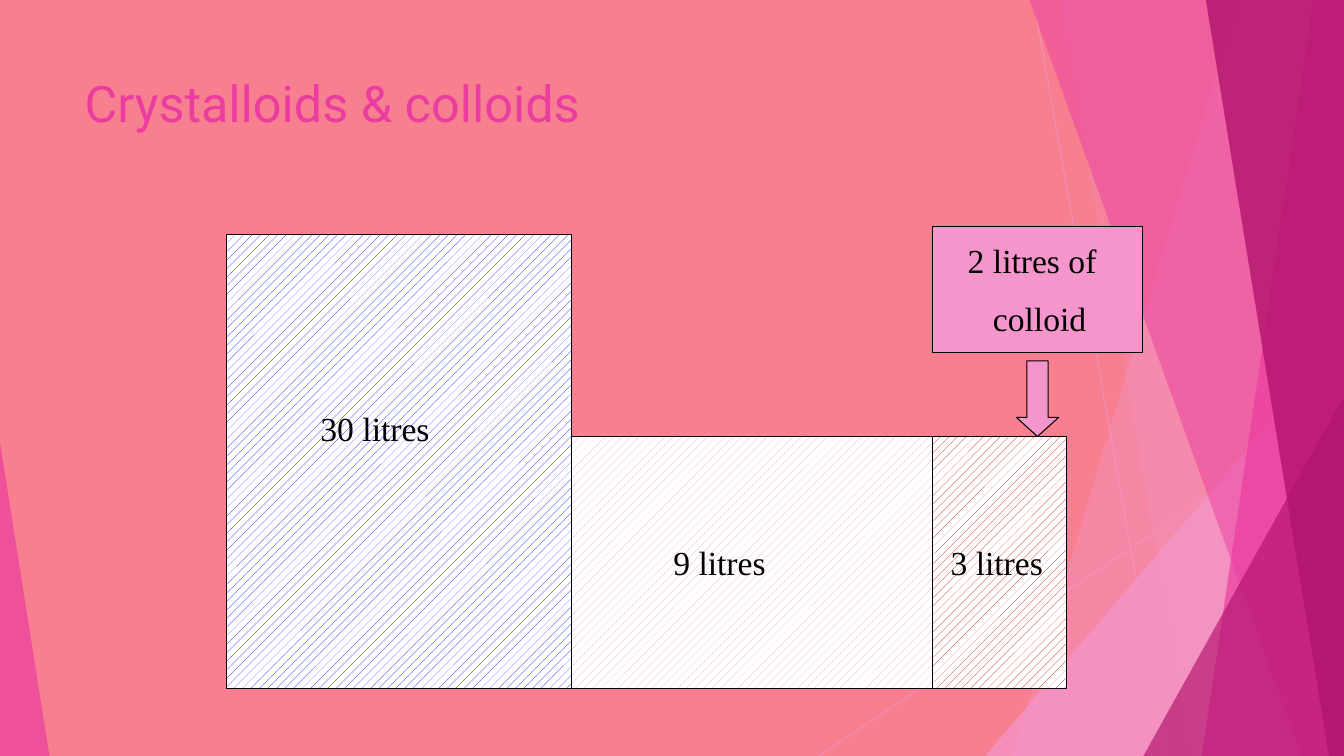
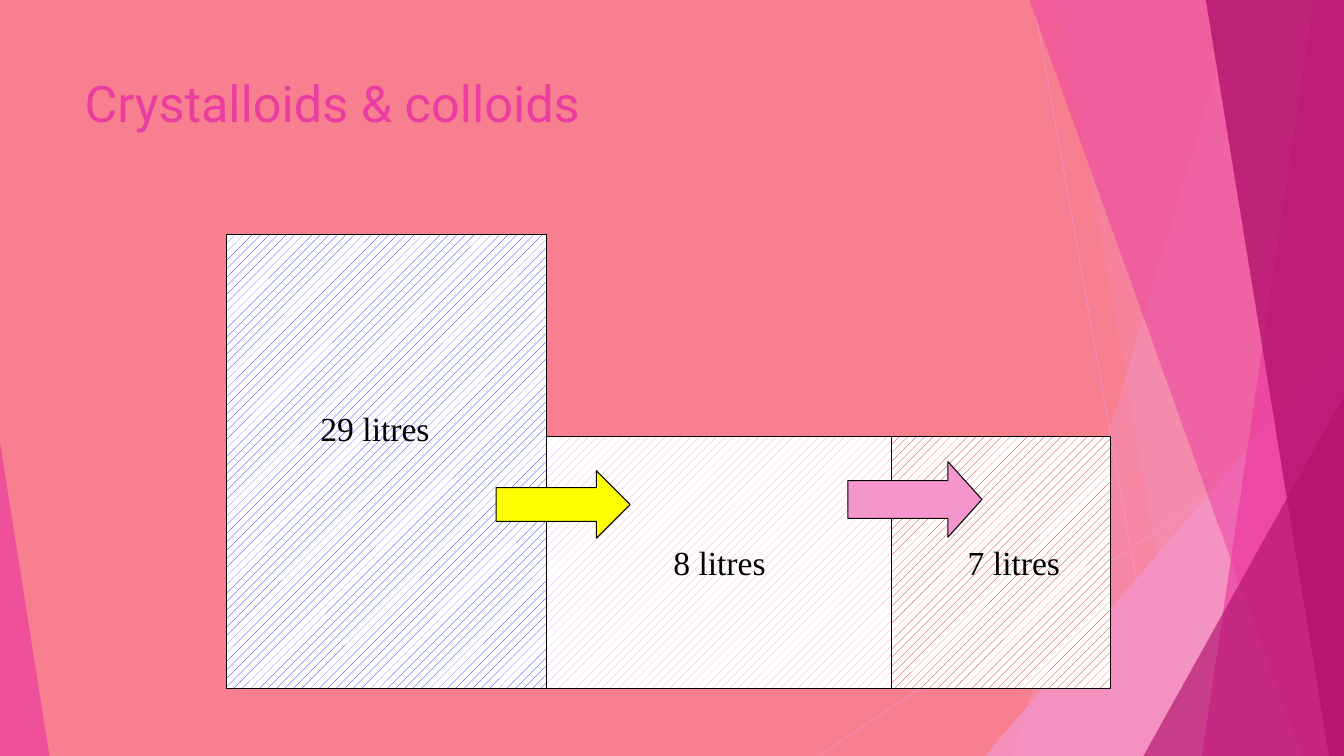
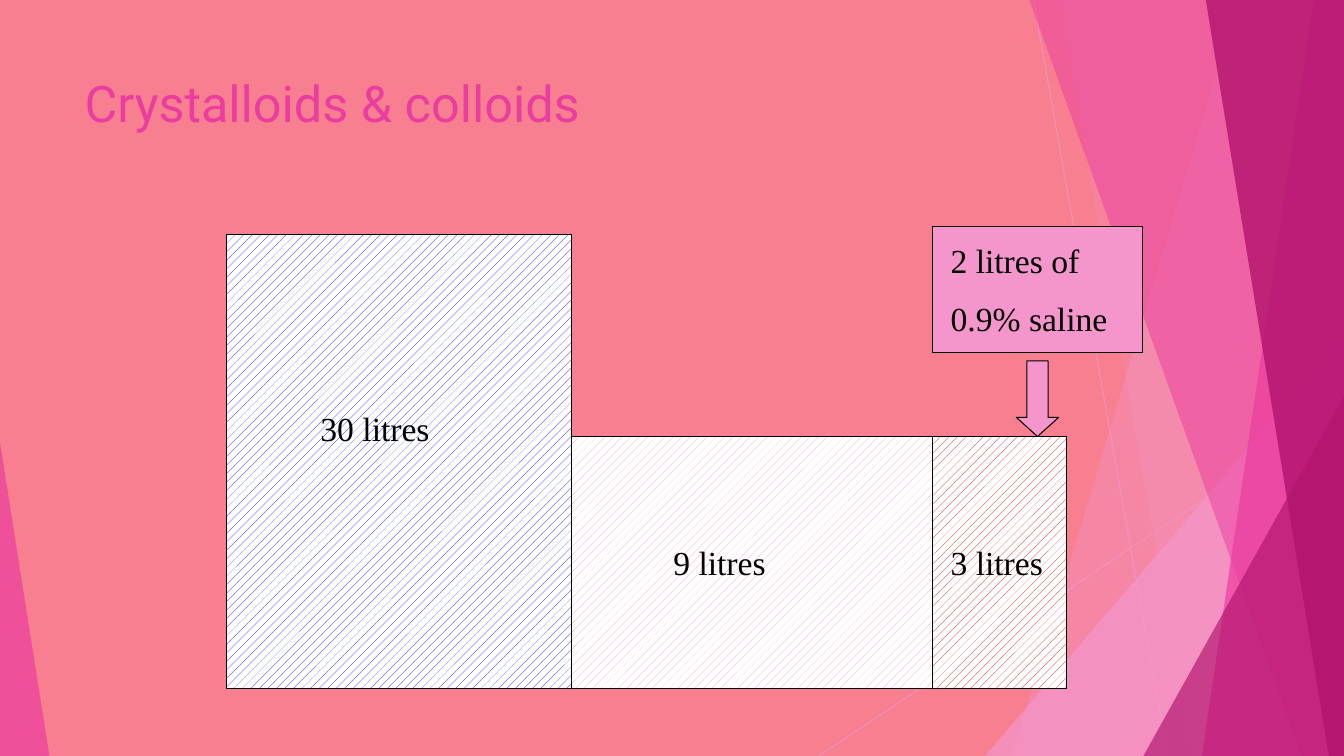
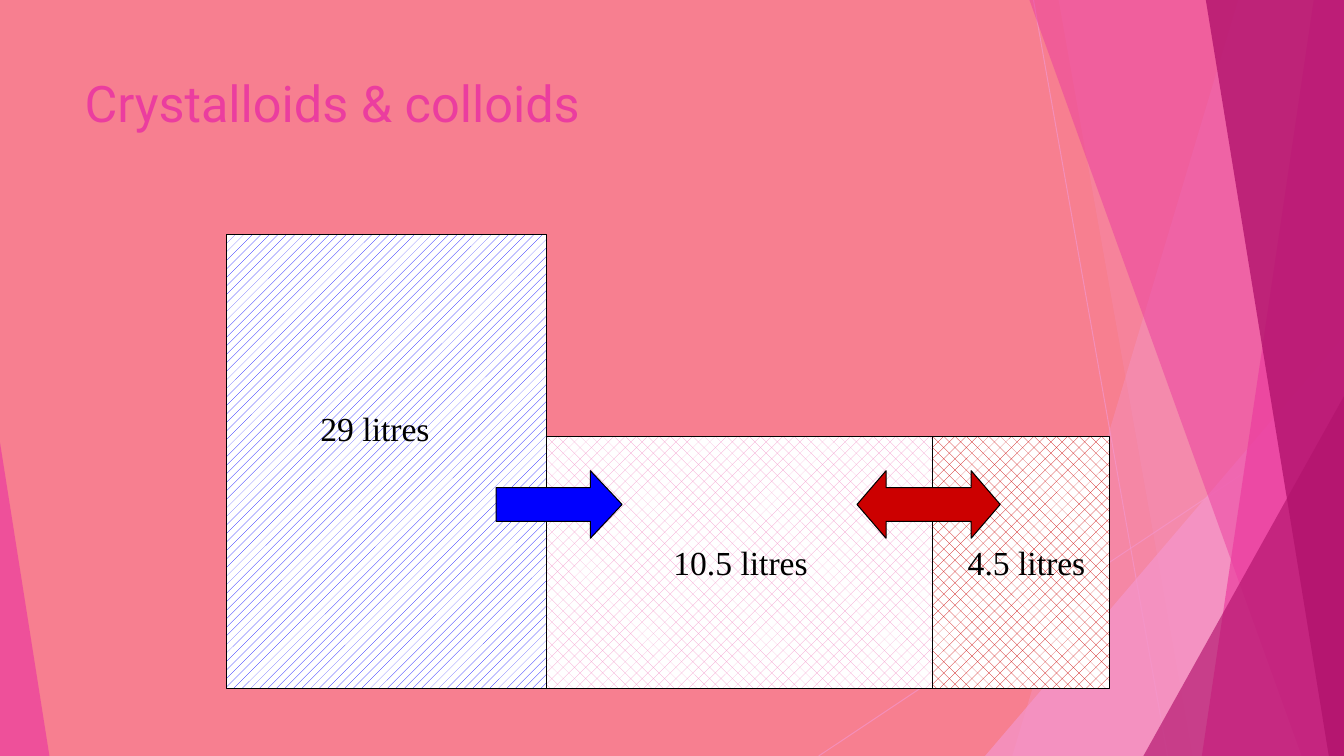
"""Build four slides on how crystalloids and colloids spread through body fluids."""
from lxml.etree import SubElement
from pptx import Presentation
from pptx.dml.color import RGBColor
from pptx.enum.dml import MSO_PATTERN
from pptx.enum.shapes import MSO_CONNECTOR, MSO_SHAPE
from pptx.enum.text import MSO_ANCHOR, MSO_AUTO_SIZE
from pptx.oxml.ns import qn
from pptx.util import Inches, Pt

CORAL = RGBColor(0xF7, 0x7F, 0x90)
PINK = RGBColor(0xF4, 0x96, 0xCB)
MAGENTA = RGBColor(0xEB, 0x3D, 0x9F)
PLUM = RGBColor(0xB2, 0x13, 0x6D)
BLUE = RGBColor(0x00, 0x00, 0xFF)
RED = RGBColor(0xCC, 0x00, 0x00)
YELLOW = RGBColor(0xFF, 0xFF, 0x00)
BLACK = RGBColor(0x00, 0x00, 0x00)
WHITE = RGBColor(0xFF, 0xFF, 0xFF)

TITLE_FONT, BODY_FONT = "Roboto", "Times New Roman"
WIDTH, HEIGHT = 13.33, 7.5
CHART_LEFT, CHART_BOTTOM = 2.25, 6.83
CELL_HEIGHT, FLUID_HEIGHT = 4.5, 2.5
SPARSE, DENSE = MSO_PATTERN.PERCENT_20, MSO_PATTERN.PERCENT_25


def set_alpha(fill, percent):
    """Make a solid fill partly transparent."""
    color = fill._xPr.find(qn("a:solidFill"))[0]
    SubElement(color, qn("a:alpha")).set("val", str(percent * 1000))


def add_ray(s, x1, y1, x2, y2):
    """Draw a thin translucent background line."""
    ray = s.shapes.add_connector(
        MSO_CONNECTOR.STRAIGHT, Inches(x1), Inches(y1), Inches(x2), Inches(y2))
    ray.line.width = Pt(0.75)
    ray.line.color.rgb = PINK
    set_alpha(ray.line.fill, 70)
    SubElement(ray._element.spPr, qn("a:effectLst"))


def tint(sp, color, alpha):
    """Give a background shape a translucent fill and no line."""
    sp.shadow.inherit = False
    sp.fill.solid()
    sp.fill.fore_color.rgb = color
    set_alpha(sp.fill, alpha)
    sp.line.fill.background()


def add_band(s, top_x, bottom_x, color, alpha):
    """Fill the area between a slanted edge and the right side of the slide."""
    builder = s.shapes.build_freeform(Inches(top_x), 0)
    corners = [(WIDTH, 0), (WIDTH, HEIGHT), (bottom_x, HEIGHT)]
    builder.add_line_segments([(Inches(x), Inches(y)) for x, y in corners])
    tint(builder.convert_to_shape(), color, alpha)


def add_wedge(s, left, top, width, apex, color, alpha):
    """Stand a triangle on the bottom edge of the slide."""
    sp = s.shapes.add_shape(
        MSO_SHAPE.ISOSCELES_TRIANGLE, Inches(left), Inches(top),
        Inches(width), Inches(HEIGHT - top))
    sp.adjustments[0] = apex
    tint(sp, color, alpha)


def add_backdrop(s):
    """Draw the facets that every slide shares."""
    add_ray(s, 10.25, 0, 11.58, HEIGHT)
    add_ray(s, WIDTH, 4.03, 8.12, HEIGHT)
    add_band(s, 12.28, 10.04, PINK, 36)
    add_band(s, 10.5, 11.83, PINK, 20)
    add_wedge(s, 9.77, 3.33, 3.56, 1, PINK, 72)
    add_band(s, 10.21, 12.91, MAGENTA, 50)
    add_band(s, 13.03, 11.92, MAGENTA, 70)
    add_band(s, 11.96, 13.18, PLUM, 80)
    add_wedge(s, 11.34, 3.93, 1.99, 1, PLUM, 66)
    add_wedge(s, 0, 4.39, 0.49, 0, MAGENTA, 70)


def add_text(s, left, top, width, height, lines, font=BODY_FONT, size=24, color=BLACK):
    """Add a top-anchored text box with one paragraph per line."""
    box = s.shapes.add_textbox(Inches(left), Inches(top), Inches(width), Inches(height))
    tf = box.text_frame
    tf.word_wrap = True
    tf.vertical_anchor = MSO_ANCHOR.TOP
    tf.auto_size = MSO_AUTO_SIZE.SHAPE_TO_FIT_TEXT if font == BODY_FONT else MSO_AUTO_SIZE.NONE
    for i, line in enumerate(lines):
        p = tf.add_paragraph() if i else tf.paragraphs[0]
        p.text = line
        p.font.name = font
        p.font.size = Pt(size)
        p.font.color.rgb = color
        if i:
            p.space_before = Pt(13)
    return tf


def add_outlined(s, kind, left, top, width, height, color, pattern=None):
    """Add a black-edged shape with a solid or patterned fill."""
    sp = s.shapes.add_shape(kind, Inches(left), Inches(top), Inches(width), Inches(height))
    sp.shadow.inherit = False
    if pattern is None:
        sp.fill.solid()
    else:
        sp.fill.patterned()
        sp.fill.pattern = pattern
        sp.fill.back_color.rgb = WHITE
    sp.fill.fore_color.rgb = color
    sp.line.color.rgb = BLACK
    sp.line.width = Pt(0.75)
    return sp


def add_arrow(s, kind, left, top, width, height, color, head):
    """Add a block arrow whose head has the given proportion."""
    sp = add_outlined(s, kind, left, top, width, height, color)
    sp.adjustments[1] = head


def add_compartments(s, widths, litres, last_label, fluid_pattern=SPARSE):
    """Draw the three fluid compartments side by side with their volumes."""
    heights = (CELL_HEIGHT, FLUID_HEIGHT, FLUID_HEIGHT)
    patterns = (SPARSE, fluid_pattern, fluid_pattern)
    labels = ((3.08, 4, 1.67), (6.58, 5.33, 1.83), last_label)
    left = CHART_LEFT
    for width, height, color, pattern, volume, (x, y, w) in zip(
            widths, heights, (BLUE, PINK, RED), patterns, litres, labels):
        add_outlined(s, MSO_SHAPE.RECTANGLE, left, CHART_BOTTOM - height,
                     width, height, color, pattern)
        add_text(s, x, y, w, 0.5, [f"{volume} litres"])
        left += width


def add_infusion(s, fluid, text_left, indent=0):
    """Show the starting volumes and two litres of a fluid going in."""
    add_outlined(s, MSO_SHAPE.RECTANGLE, 9.25, 2.25, 2.08, 1.25, PINK)
    add_compartments(s, (3.42, 3.58, 1.33), ("30", "9", "3"), (9.33, 5.33, 1.17))
    tf = add_text(s, text_left, 2.33, 2.17, 1.11, ["2 litres of", fluid])
    tf.paragraphs[1]._p.get_or_add_pPr().set("marL", str(Inches(indent)))
    add_arrow(s, MSO_SHAPE.DOWN_ARROW, 10.08, 3.58, 0.42, 0.75, PINK, 0.45)


def add_slide(prs):
    """Add a slide with the shared backdrop and title."""
    s = prs.slides.add_slide(prs.slide_layouts[6])
    add_backdrop(s)
    add_text(s, 0.74, 0.67, 9.4, 1.44, ["Crystalloids & colloids"], TITLE_FONT, 36, MAGENTA)
    return s


def main():
    """Build and save the presentation."""
    prs = Presentation()
    prs.slide_width, prs.slide_height = Inches(WIDTH), Inches(HEIGHT)
    fill = prs.slide_master.background.fill
    fill.solid()
    fill.fore_color.rgb = CORAL

    add_infusion(add_slide(prs), "colloid", 9.5, 0.25)

    s = add_slide(prs)
    add_compartments(s, (3.17, 3.42, 2.17), ("29", "8", "7"), (9.5, 5.33, 1.17))
    add_arrow(s, MSO_SHAPE.RIGHT_ARROW, 4.92, 4.67, 1.33, 0.67, YELLOW, 0.5)
    add_arrow(s, MSO_SHAPE.RIGHT_ARROW, 8.41, 4.58, 1.33, 0.75, PINK, 0.45)

    add_infusion(add_slide(prs), "0.9% saline", 9.33)

    s = add_slide(prs)
    add_compartments(s, (3.17, 3.83, 1.75), ("29", "10.5", "4.5"), (9.5, 5.33, 1.5), DENSE)
    add_arrow(s, MSO_SHAPE.LEFT_RIGHT_ARROW, 8.5, 4.67, 1.42, 0.67, RED, 0.43)
    add_arrow(s, MSO_SHAPE.RIGHT_ARROW, 4.92, 4.67, 1.25, 0.67, BLUE, 0.47)

    prs.save("out.pptx")


if __name__ == "__main__":
    main()
